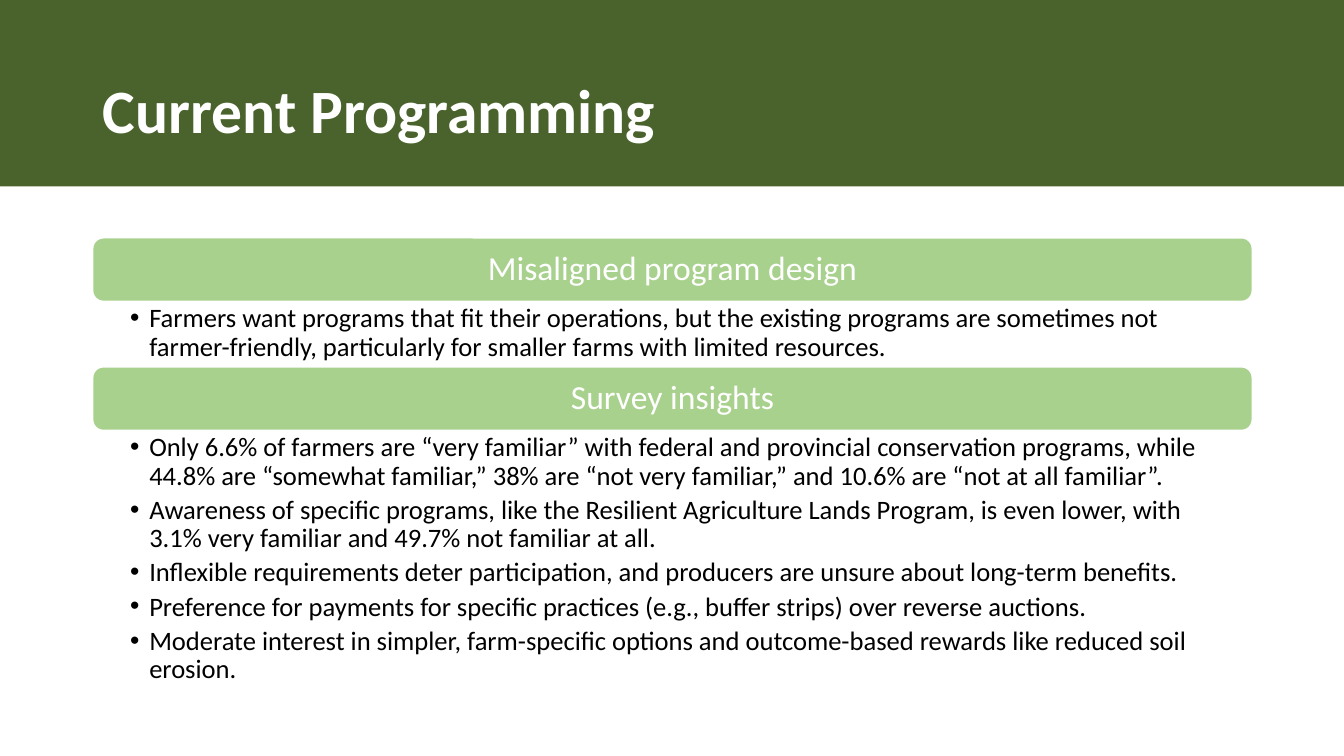
from dataclasses import dataclass

from lxml import etree
from pptx import Presentation
from pptx.dml.color import RGBColor
from pptx.enum.shapes import MSO_SHAPE
from pptx.enum.text import MSO_ANCHOR, MSO_AUTO_SIZE, PP_ALIGN
from pptx.oxml.ns import qn
from pptx.util import Inches, Pt

RECTANGLE, ROUNDED = MSO_SHAPE.RECTANGLE, MSO_SHAPE.ROUNDED_RECTANGLE
LEFT, CENTER = PP_ALIGN.LEFT, PP_ALIGN.CENTER
TOP, MIDDLE = MSO_ANCHOR.TOP, MSO_ANCHOR.MIDDLE
NO_AUTOFIT = MSO_AUTO_SIZE.NONE

FONT = "Calibri"
WHITE, BLACK = "FFFFFF", "000000"
DARK_GREEN, LIGHT_GREEN = "4A632C", "A9D18E"
SLIDE_WIDTH, SLIDE_HEIGHT = 13.33, 7.5
CONTENT_LEFT, CONTENT_WIDTH = 0.92, 11.5
CONTENT_TOP, HEADING_HEIGHT = 2.36, 0.63
BANNER_HEIGHT = 1.85
BULLET_INDENT = 0.19


@dataclass
class Section:
    heading: str
    points: list[str]
    list_height: float


SECTIONS = [
    Section("Misaligned program design", [
        "Farmers want programs that fit their operations, but the existing programs "
        "are sometimes not farmer-friendly, particularly for smaller farms with "
        "limited resources.",
    ], 0.65),
    Section("Survey insights", [
        "Only 6.6% of farmers are “very familiar” with federal and provincial "
        "conservation programs, while 44.8% are “somewhat familiar,” 38% are “not "
        "very familiar,” and 10.6% are “not at all familiar”.",
        "Awareness of specific programs, like the Resilient Agriculture Lands Program, "
        "is even lower, with 3.1% very familiar and 49.7% not familiar at all.",
        "Inflexible requirements deter participation, and producers are unsure about "
        "long-term benefits.",
        "Preference for payments for specific practices (e.g., buffer strips) over "
        "reverse auctions.",
        "Moderate interest in simpler, farm-specific options and outcome-based rewards "
        "like reduced soil erosion.",
    ], 2.66),
]


def color(value: str) -> RGBColor:
    return RGBColor.from_string(value)


def place(shape, left: float, top: float, width: float, height: float) -> None:
    shape.left, shape.top = Inches(left), Inches(top)
    shape.width, shape.height = Inches(width), Inches(height)


def add_bullet(paragraph) -> None:
    properties = paragraph._p.get_or_add_pPr()
    properties.set("marL", str(Inches(BULLET_INDENT)))
    properties.set("indent", str(-Inches(BULLET_INDENT)))
    etree.SubElement(properties, qn("a:buFont")).set("typeface", "Arial")
    etree.SubElement(properties, qn("a:buChar")).set("char", "•")


def write_text(shape, lines: list[str], *, size: float, text_color: str,
               bold: bool = False, align=LEFT, anchor=MIDDLE,
               margins: tuple = (0.1, 0.05, 0.1, 0.05),
               bullets: bool = False, space_after: float = 0) -> None:
    frame = shape.text_frame
    frame.word_wrap = True
    frame.auto_size = NO_AUTOFIT
    frame.vertical_anchor = anchor
    (frame.margin_left, frame.margin_top,
     frame.margin_right, frame.margin_bottom) = map(Inches, margins)
    for index, line in enumerate(lines):
        paragraph = frame.add_paragraph() if index else frame.paragraphs[0]
        if bullets:
            paragraph.level = 1
            add_bullet(paragraph)
        paragraph.alignment = align
        paragraph.line_spacing = 0.9
        paragraph.space_before = Pt(0)
        paragraph.space_after = Pt(space_after)
        run = paragraph.add_run()
        run.text = line
        run.font.name = FONT
        run.font.size = Pt(size)
        run.font.bold = bold
        run.font.color.rgb = color(text_color)


def add_box(slide, kind, left: float, top: float, width: float, height: float,
            fill: str, line: str | None = None):
    shape = slide.shapes.add_shape(kind, *map(Inches, (left, top, width, height)))
    shape.shadow.inherit = False
    shape.fill.solid()
    shape.fill.fore_color.rgb = color(fill)
    if line:
        shape.line.color.rgb = color(line)
        shape.line.width = Pt(1)
    else:
        shape.line.fill.background()
    return shape


def add_section(slide, section: Section, body, top: float) -> float:
    """Draw a heading bar with its list and return the bottom edge."""
    bar = add_box(slide, ROUNDED, CONTENT_LEFT, top, CONTENT_WIDTH, HEADING_HEIGHT,
                  LIGHT_GREEN, WHITE)
    write_text(bar, [section.heading], size=24, text_color=WHITE, align=CENTER)
    list_top = top + HEADING_HEIGHT
    place(body, CONTENT_LEFT, list_top, CONTENT_WIDTH, section.list_height)
    write_text(body, section.points, size=19, text_color=BLACK, anchor=TOP,
               margins=(0.37, 0.03, 0.19, 0.03), bullets=True, space_after=3.8)
    return list_top + section.list_height


def main() -> None:
    presentation = Presentation()
    presentation.slide_width = Inches(SLIDE_WIDTH)
    presentation.slide_height = Inches(SLIDE_HEIGHT)
    two_content = presentation.slide_layouts[3]
    slide = presentation.slides.add_slide(two_content)

    # Title on a banner, which goes behind it
    title = slide.shapes.title
    banner = add_box(slide, RECTANGLE, 0, 0, SLIDE_WIDTH, BANNER_HEIGHT, DARK_GREEN)
    title.element.addprevious(banner.element)
    place(title, CONTENT_LEFT, 0.4, CONTENT_WIDTH, 1.45)
    write_text(title, ["Current Programming"], size=44, text_color=WHITE, bold=True)

    # Sections stacked from top to bottom
    top = CONTENT_TOP
    for section, body in zip(SECTIONS, list(slide.placeholders)[1:]):
        top = add_section(slide, section, body, top)

    presentation.save("out.pptx")


if __name__ == "__main__":
    main()
